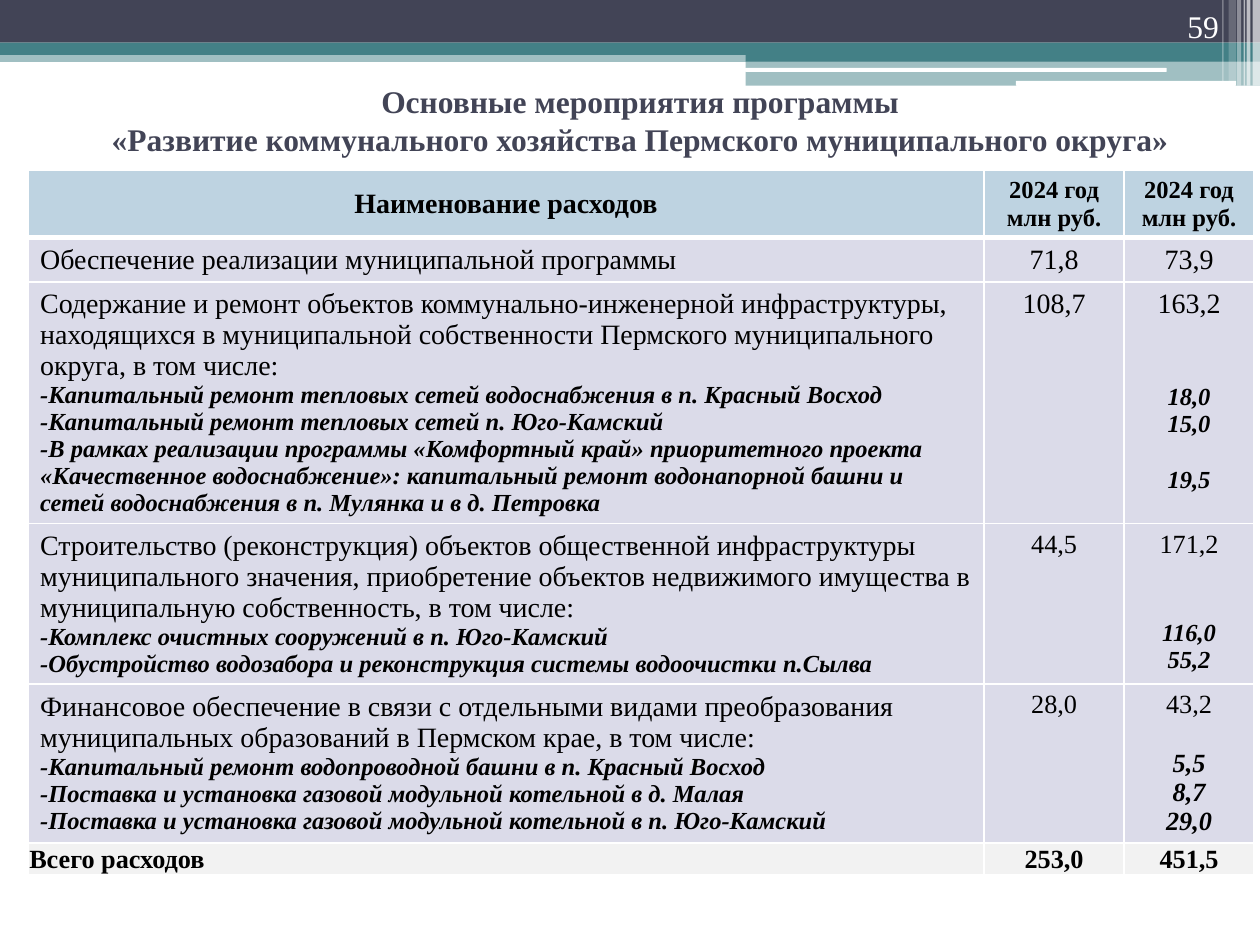
import pptx
import pptx.util
import pptx.dml.color
import pptx.enum.shapes
import pptx.enum.text
import pptx.oxml
import pptx.oxml.ns

Cm = pptx.util.Cm
Pt = pptx.util.Pt
ALIGN = pptx.enum.text.PP_ALIGN
ANCHOR = pptx.enum.text.MSO_ANCHOR
FONT = "Times New Roman"

BARS = [
    (0, 1.02, 25.4, 0.23, "438086", 50),
    (0, 0, 25.4, 0.86, "424456", 100),
    (0, 0.86, 25.4, 0.25, "438086", 100),
    (15.03, 0.99, 10.37, 0.25, "438086", 100),
    (15.03, 1.23, 10.37, 0.5, "438086", 50),
]
ROUNDED_BARS = [
    (15.02, 1.37, 8.5, 0.08, "FFFFFF", 100),
    (20.48, 1.63, 4.44, 0.1, "FFFFFF", 100),
]
STRIPES = [
    (25.25, 0, 0.15, 1.73, "FFFFFF", 65),
    (25.13, 0, 0.08, 1.73, "FFFFFF", 65),
    (25.07, 0, 0.03, 1.73, "FFFFFF", 60),
    (24.94, 0, 0.08, 1.73, "FFFFFF", 40),
    (24.77, 0, 0.15, 1.63, "FFFFFF", 20),
    (24.64, 0, 0.03, 1.63, "FFFFFF", 30),
]

HEADER = {"size": Pt(16), "bold": True, "italic": False}
UNIT = {"size": Pt(14), "bold": True, "italic": False}
BODY = {"size": Pt(16), "bold": False, "italic": False}
AMOUNT = {"size": Pt(15), "bold": False, "italic": False}
DETAIL = {"size": Pt(14), "bold": True, "italic": True}
LARGE_DETAIL = {"size": Pt(15), "bold": True, "italic": True}
TOTAL = {"size": Pt(15), "bold": True, "italic": False}

COLUMN_WIDTHS = [19.28, 2.82, 2.62]
ROW_HEIGHTS = [1.31, 0.89, 4.86, 3.23, 3.16, 0.65]
YEAR = [("2024 год", UNIT), ("млн руб.", UNIT)]
ROWS = [
    [[("Наименование расходов", HEADER)], YEAR, YEAR],
    [[("Обеспечение реализации муниципальной программы", BODY)],
     [("71,8", BODY)], [("73,9", BODY)]],
    [[("Содержание и ремонт объектов коммунально-инженерной инфраструктуры, "
       "находящихся в муниципальной собственности Пермского муниципального "
       "округа, в том числе:", BODY),
      ("-Капитальный ремонт тепловых сетей водоснабжения в п. Красный Восход", DETAIL),
      ("-Капитальный ремонт тепловых сетей п. Юго-Камский", DETAIL),
      ("-В рамках реализации программы «Комфортный край» приоритетного проекта "
       "«Качественное водоснабжение»: капитальный ремонт водонапорной башни и "
       "сетей водоснабжения в п. Мулянка и в д. Петровка", DETAIL)],
     [("108,7", BODY)],
     [("163,2", BODY), ("18,0", DETAIL, 36.8), ("15,0", DETAIL), ("19,5", DETAIL, 16.1)]],
    [[("Строительство (реконструкция) объектов общественной инфраструктуры "
       "муниципального значения, приобретение объектов недвижимого имущества в "
       "муниципальную собственность, в том числе:", BODY),
      ("-Комплекс очистных сооружений в п. Юго-Камский", DETAIL),
      ("-Обустройство водозабора и реконструкция системы водоочистки п.Сылва", DETAIL)],
     [("44,5", AMOUNT)],
     [("171,2", AMOUNT), ("116,0", DETAIL, 34.5), ("55,2", DETAIL)]],
    [[("Финансовое обеспечение в связи с отдельными видами преобразования "
       "муниципальных образований в Пермском крае, в том числе:", BODY),
      ("-Капитальный ремонт водопроводной башни в п. Красный Восход", DETAIL),
      ("-Поставка и установка газовой модульной котельной в д. Малая", DETAIL),
      ("-Поставка и установка газовой модульной котельной в п. Юго-Камский", DETAIL)],
     [("28,0", AMOUNT)],
     [("43,2", AMOUNT), ("5,5", LARGE_DETAIL, 17.2),
      ("8,7", LARGE_DETAIL), ("29,0", LARGE_DETAIL)]],
    [[("Всего расходов", TOTAL)], [("253,0", TOTAL)], [("451,5", TOTAL)]],
]


def set_color(color_format, value):
    color_format.rgb = pptx.dml.color.RGBColor.from_string(value)


def set_attributes(target, values):
    for name, value in values.items():
        setattr(target, name, value)


def format_font(font, values, color):
    set_attributes(font, {"name": FONT, **values})
    set_color(font.color, color)


def add_bar(slide, kind, left, top, width, height, color, opacity):
    shape = slide.shapes.add_shape(kind, Cm(left), Cm(top), Cm(width), Cm(height))
    shape.shadow.inherit = False
    shape.line.fill.background()
    shape.fill.solid()
    set_color(shape.fill.fore_color, color)
    if opacity < 100:
        fill_color = shape.fill._xPr.find(".//" + pptx.oxml.ns.qn("a:srgbClr"))
        alpha = pptx.oxml.parse_xml(
            f'<a:alpha {pptx.oxml.ns.nsdecls("a")} val="{opacity * 1000}"/>')
        fill_color.append(alpha)


def format_title(title):
    set_attributes(title, {"left": Cm(0.41), "top": Cm(1.52),
                           "width": Cm(24.99), "height": Cm(1.8)})
    frame = title.text_frame
    frame.text = ("Основные мероприятия программы\v"
                  "«Развитие коммунального хозяйства Пермского муниципального округа»")
    set_attributes(frame, {"word_wrap": True, "vertical_anchor": ANCHOR.MIDDLE,
                           "auto_size": pptx.enum.text.MSO_AUTO_SIZE.NONE})
    paragraph = frame.paragraphs[0]
    paragraph.alignment = ALIGN.CENTER
    for run in paragraph.runs:
        format_font(run.font, {"size": Pt(18), "bold": True}, "424456")


def add_page_number(slide):
    frame = slide.shapes.add_textbox(Cm(22.71), 0, Cm(2.11), Cm(1.02)).text_frame
    set_attributes(frame, {"word_wrap": True, "vertical_anchor": ANCHOR.BOTTOM})
    paragraph = frame.paragraphs[0]
    paragraph.alignment = ALIGN.RIGHT
    run = paragraph.add_run()
    run.text = "59"
    format_font(run.font, {"size": Pt(18)}, "FFFFFF")


def set_borders(cell, top, bottom):
    properties = cell._tc.get_or_add_tcPr()
    for side, width in {"L": 1, "R": 1, "T": top, "B": bottom}.items():
        properties.append(pptx.oxml.parse_xml(
            f'<a:ln{side} {pptx.oxml.ns.nsdecls("a")} w="{Pt(width)}"><a:solidFill>'
            f'<a:srgbClr val="FFFFFF"/></a:solidFill></a:ln{side}>'))


def fill_cell(cell, entries, alignment):
    frame = cell.text_frame
    for index, (text, values, *gap) in enumerate(entries):
        paragraph = frame.add_paragraph() if index else frame.paragraphs[0]
        paragraph.alignment = alignment
        if gap:
            paragraph.space_before = Pt(gap[0])
        run = paragraph.add_run()
        run.text = text
        format_font(run.font, values, "000000")


def add_expense_table(slide):
    table = slide.shapes.add_table(
        len(ROWS), len(COLUMN_WIDTHS), Cm(0.56), Cm(3.44),
        Cm(sum(COLUMN_WIDTHS)), Cm(sum(ROW_HEIGHTS))).table
    for column, width in zip(table.columns, COLUMN_WIDTHS):
        column.width = Cm(width)
    last = len(ROWS) - 1
    fills = {0: "BED3E1", last: "F2F2F2"}
    for row_index, (row, height) in enumerate(zip(table.rows, ROW_HEIGHTS)):
        row.height = Cm(height)
        side, top, bottom = (0.03, 0.03, 0) if row_index == last else (0.25, 0.13, 0.13)
        for column_index, cell in enumerate(row.cells):
            amount_at_top = column_index and 1 < row_index < last
            set_attributes(cell, {
                "margin_left": Cm(side), "margin_right": Cm(side),
                "margin_top": Cm(top), "margin_bottom": Cm(bottom),
                "vertical_anchor": ANCHOR.TOP if amount_at_top else ANCHOR.MIDDLE})
            set_borders(cell, 3 if row_index == 1 else 1, 3 if row_index == 0 else 1)
            cell.fill.solid()
            set_color(cell.fill.fore_color, fills.get(row_index, "DBDBE9"))
            centred = column_index or row_index == 0
            fill_cell(cell, ROWS[row_index][column_index],
                      ALIGN.CENTER if centred else ALIGN.LEFT)


def main():
    presentation = pptx.Presentation()
    presentation.slide_width, presentation.slide_height = Cm(25.4), Cm(19.05)
    slide = presentation.slides.add_slide(presentation.slide_layouts[5])
    kinds = pptx.enum.shapes.MSO_SHAPE
    for kind, bars in [(kinds.RECTANGLE, BARS), (kinds.ROUNDED_RECTANGLE, ROUNDED_BARS),
                       (kinds.RECTANGLE, STRIPES)]:
        for bar in bars:
            add_bar(slide, kind, *bar)
    format_title(slide.shapes.title)
    add_expense_table(slide)
    add_page_number(slide)
    presentation.save("out.pptx")


if __name__ == "__main__":
    main()
